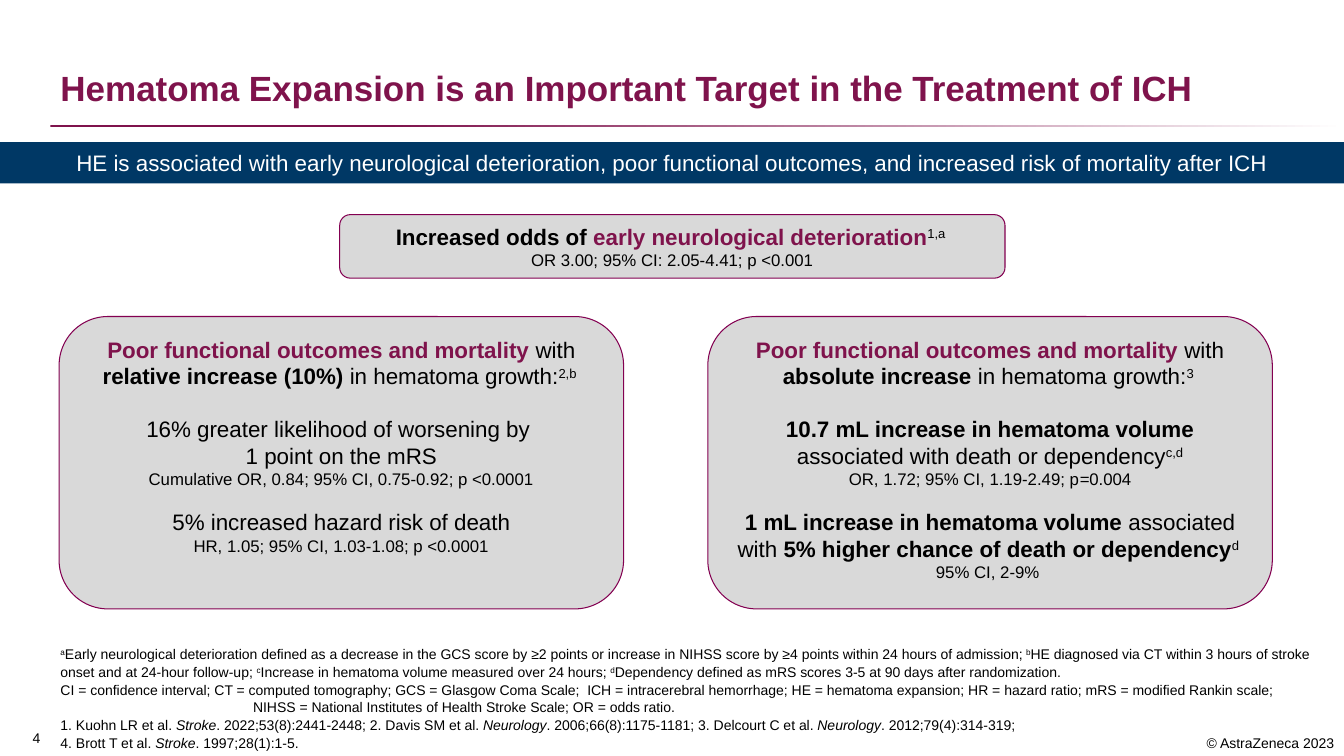
from dataclasses import dataclass
from typing import NamedTuple

from pptx import Presentation
from pptx.dml.color import RGBColor
from pptx.enum.shapes import MSO_SHAPE as Preset
from pptx.enum.text import MSO_ANCHOR as Anchor, MSO_AUTO_SIZE as AutoSize, PP_ALIGN as Align
from pptx.oxml.xmlchemy import OxmlElement
from pptx.util import Inches, Pt

COLOURS = {
    "plum": "7F134C", "outline": "830051", "navy": "003865",
    "grey": "D9D9D9", "black": "000000", "white": "FFFFFF",
}
SLIDE_WIDTH, SLIDE_HEIGHT = Inches(13.33), Inches(7.5)
FONT = "Arial"
HEADING, DETAIL, NOTE = 16, 12, 10


class Area(NamedTuple):
    """Left, top, width and height in percent of the slide."""
    left: float
    top: float
    width: float
    height: float

    def lengths(self) -> tuple:
        sides = (SLIDE_WIDTH, SLIDE_HEIGHT) * 2
        return tuple(int(side * share / 100) for side, share in zip(sides, self))


class Span(NamedTuple):
    text: str
    bold: bool = False
    italic: bool = False
    raised: bool = False
    colour: str = "black"


@dataclass
class Para:
    spans: list[Span]
    size: float = HEADING
    align: Align = Align.CENTER
    before: float = 0
    indent: float = 0
    spacing: float = 1.0


@dataclass
class Card:
    area: Area
    paras: list[Para]


def rgb(name: str) -> RGBColor:
    return RGBColor.from_string(COLOURS[name])


def bold(text: str, colour: str = "black") -> Span:
    return Span(text, bold=True, colour=colour)


def italic(text: str) -> Span:
    return Span(text, italic=True)


def raised(text: str) -> Span:
    return Span(text, raised=True)


def detail(text: str) -> Para:
    return Para([Span(text)], DETAIL)


def note(*spans: Span, indent: float = 0) -> Para:
    return Para(list(spans), NOTE, Align.LEFT, indent=indent, spacing=1.05)


def write(box, paras: list[Para], anchor: Anchor) -> None:
    frame = box.text_frame
    frame.word_wrap = True
    frame.auto_size = AutoSize.NONE
    frame.vertical_anchor = anchor
    for index, para in enumerate(paras):
        line = frame.paragraphs[0] if index == 0 else frame.add_paragraph()
        properties = line._p.get_or_add_pPr()
        properties.set("marL", str(Inches(para.indent)))
        properties.set("indent", "0")
        properties.append(OxmlElement("a:buNone"))
        line.alignment = para.align
        line.line_spacing = para.spacing
        line.space_before, line.space_after = Pt(para.before), Pt(0)
        for span in para.spans:
            run = line.add_run()
            run.text = span.text
            font = run.font
            font.name, font.size = FONT, Pt(para.size)
            font.bold, font.italic = span.bold, span.italic
            font.color.rgb = rgb(span.colour)
            if span.raised:
                font._element.set("baseline", "30000")


def place(box, area: Area) -> None:
    box.left, box.top, box.width, box.height = area.lengths()


def add_panel(page, preset: Preset, area: Area, fill: str, outline: str | None = None):
    panel = page.shapes.add_shape(preset, *area.lengths())
    panel.shadow.inherit = False
    panel.fill.solid()
    panel.fill.fore_color.rgb = rgb(fill)
    if outline:
        panel.line.color.rgb = rgb(outline)
        panel.line.width = Pt(0.75)
    else:
        panel.line.fill.background()
    return panel


def add_rule(page, area: Area) -> None:
    rule = add_panel(page, Preset.RECTANGLE, area, "plum")
    rule.fill.gradient()
    rule.fill.gradient_angle = 0
    for stop, (position, colour) in zip(rule.fill.gradient_stops, [(0.26, "plum"), (1, "white")]):
        stop.position = position
        stop.color.rgb = rgb(colour)


def growth_heading(increase: str, reference: str) -> Para:
    return Para([bold("Poor functional outcomes and mortality ", "plum"), Span("with"),
                 bold(f" {increase} "), Span("in hematoma growth:"), raised(reference)])


# Gaps as tall as one line of heading or detail text
HEADING_GAP, DETAIL_GAP = 18.4, 13.8
CARD_TOP, CARD_WIDTH, CARD_HEIGHT = 41.87, 42, 38.67

CARDS = [
    Card(Area(25.28, 28.4, 49.5, 8.4), [
        Para([bold("Increased odds of "), bold("early neurological deterioration", "plum"),
              raised("1,a ")]),
        detail("OR 3.00; 95% CI: 2.05-4.41; p <0.001"),
    ]),
    Card(Area(4.4, CARD_TOP, CARD_WIDTH, CARD_HEIGHT), [
        growth_heading("relative increase (10%)", "2,b "),
        Para([Span("16% greater likelihood of worsening by ")], before=HEADING_GAP),
        Para([Span("1 point on the mRS")]),
        detail("Cumulative OR, 0.84; 95% CI, 0.75-0.92; p <0.0001"),
        Para([Span("5% increased hazard risk of death")], before=DETAIL_GAP),
        detail("HR, 1.05; 95% CI, 1.03-1.08; p <0.0001"),
    ]),
    Card(Area(52.67, CARD_TOP, CARD_WIDTH, CARD_HEIGHT), [
        growth_heading("absolute increase", "3 "),
        Para([bold("10.7 mL increase in hematoma volume"),
              Span(" associated with death or dependency"), raised("c,d")], before=HEADING_GAP),
        Para([Span("OR, 1.72; 95% CI, 1.19-2.49; p"), italic("="), Span("0.004")], DETAIL),
        Para([bold("1 mL increase in hematoma volume "), Span("associated with "),
              bold("5% higher chance of death or dependency"), raised("d ")], before=DETAIL_GAP),
        detail("95% CI, 2-9% "),
    ]),
]

FOOTNOTES = [
    note(raised("a"), Span("Early neurological deterioration defined as a decrease in the GCS score by "
                           "≥2 points or increase in NIHSS score by ≥4 points within 24 hours of admission; "),
         raised("b"), Span("HE diagnosed via CT within 3 hours of stroke onset and at 24-hour follow-up; "),
         raised("c"), Span("Increase in hematoma volume measured over 24 hours; "),
         raised("d"), Span("Dependency defined as mRS scores 3-5 at 90 days after randomization.")),
    note(Span("CI = confidence interval; CT = computed tomography; GCS = Glasgow Coma Scale;  "
              "ICH = intracerebral hemorrhage; HE = hematoma expansion; HR = hazard ratio; "
              "mRS = modified Rankin scale;")),
    note(Span("NIHSS = National Institutes of Health Stroke Scale; OR = odds ratio."), indent=1.91),
    note(Span("1. Kuohn LR et al. "), italic("Stroke"),
         Span(". 2022;53(8):2441-2448; 2. Davis SM et al. "), italic("Neurology"),
         Span(". 2006;66(8):1175-1181; 3. Delcourt C et al. "), italic("Neurology"),
         Span(". 2012;79(4):314-319;")),
    note(Span("4. Brott T et al. "), italic("Stroke"), Span(". 1997;28(1):1-5.")),
]


def main() -> None:
    deck = Presentation()
    deck.slide_width, deck.slide_height = SLIDE_WIDTH, SLIDE_HEIGHT
    page = deck.slides.add_slide(deck.slide_layouts[1])

    # Title and rule
    title, body = page.shapes.title, page.placeholders[1]
    place(title, Area(3.75, 3.33, 92.5, 11.73))
    write(title, [Para([bold("Hematoma Expansion is an Important Target in the Treatment of ICH", "plum")],
                       25, Align.LEFT, spacing=0.9)], Anchor.BOTTOM)
    add_rule(page, Area(3.75, 16.53, 96.25, 0.27))

    # Key message band
    band = add_panel(page, Preset.RECTANGLE, Area(0, 18.8, 100, 5.47), "navy")
    write(band, [Para([Span("HE is associated with early neurological deterioration, poor functional "
                            "outcomes, and increased risk of mortality after ICH", colour="white")])],
          Anchor.MIDDLE)

    # Evidence cards
    for card in CARDS:
        panel = add_panel(page, Preset.ROUNDED_RECTANGLE, card.area, "grey", "outline")
        write(panel, card.paras, Anchor.TOP)

    # Footnotes, page number and copyright
    place(body, Area(3.75, 82.4, 96.25, 17.6))
    write(body, FOOTNOTES, Anchor.BOTTOM)
    number = page.shapes.add_textbox(*Area(0, 94.67, 3.75, 5.33).lengths())
    number.text_frame.margin_bottom = 0
    write(number, [Para([Span("4")], NOTE, Align.RIGHT)], Anchor.MIDDLE)
    rights = page.shapes.add_textbox(*Area(83.33, 96.4, 16.67, 3.6).lengths())
    write(rights, [Para([Span("© AstraZeneca 2023")], NOTE, Align.RIGHT)], Anchor.BOTTOM)

    deck.save("out.pptx")


if __name__ == "__main__":
    main()
